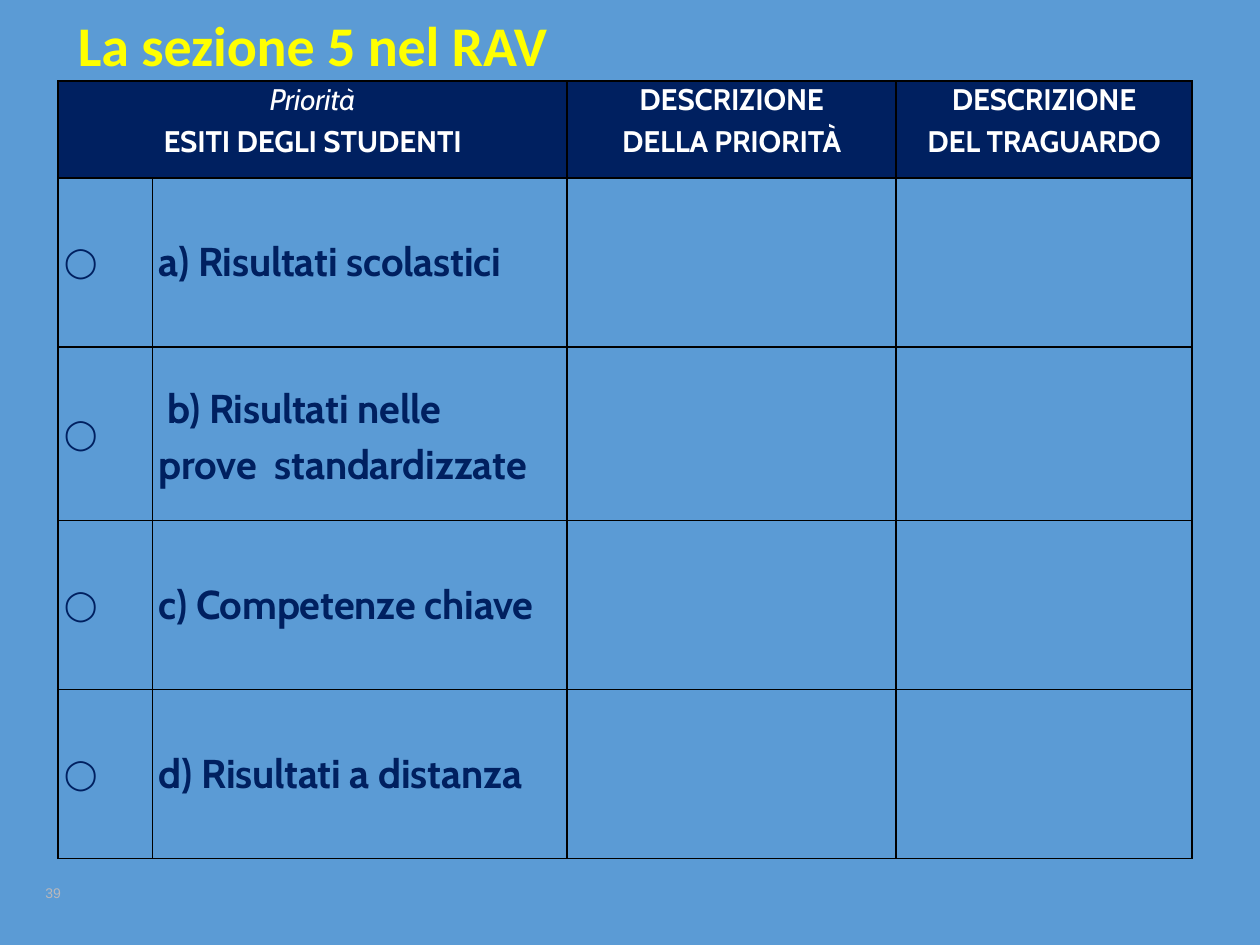
import pptx
import pptx.dml.color
import pptx.enum.text
import pptx.oxml
import pptx.util
from lxml import etree

Pt = pptx.util.Pt
RGB = pptx.dml.color.RGBColor.from_string
ALIGN = pptx.enum.text.PP_ALIGN
ANCHOR = pptx.enum.text.MSO_ANCHOR
COLOURS = {"sky": "5B9BD5", "navy": "002060", "white": "FFFFFF",
           "yellow": "FFFF00", "grey": "B9B8BB", "black": "000000"}


class SlideBuilder:
    """Holds the deck style and the current page."""

    def __init__(self, width, height):
        self.deck = pptx.Presentation()
        self.deck.slide_width, self.deck.slide_height = Pt(width), Pt(height)
        self.page = self.deck.slides.add_slide(self.deck.slide_layouts[6])
        background = self.page.background.fill
        background.solid()
        background.fore_color.rgb = RGB(COLOURS["sky"])

    def style(self, para, size, colour, font="Cabin", bold=True, italic=False, spacing=-0.1):
        for span in para.runs:
            span.font.name, span.font.size = font, Pt(size)
            span.font.bold, span.font.italic = bold, italic
            span.font.color.rgb = RGB(COLOURS[colour])
            span.font._element.set("spc", str(round(spacing * 100)))

    def text(self, left, top, width, height, words, size, colour, **look):
        box = self.page.shapes.add_textbox(Pt(left), Pt(top), Pt(width), Pt(height))
        frame = box.text_frame
        frame.word_wrap = True
        frame.vertical_anchor = ANCHOR.MIDDLE
        frame.margin_left = frame.margin_right = frame.margin_top = frame.margin_bottom = 0
        frame.text = words
        self.style(frame.paragraphs[0], size, colour, **look)

    def table(self, left, top, widths, heights):
        frame = self.page.shapes.add_table(len(heights), len(widths), Pt(left), Pt(top),
                                           Pt(sum(widths)), Pt(sum(heights)))
        table = frame.table
        table.first_row = table.horz_banding = False
        for column, width in zip(table.columns, widths):
            column.width = Pt(width)
        for row, height in zip(table.rows, heights):
            row.height = Pt(height)
        for cell in table.iter_cells():
            self.border(cell)
            cell.fill.background()
            cell.vertical_anchor = ANCHOR.MIDDLE
            cell.margin_left = Pt(3.6)
            cell.margin_right = cell.margin_top = cell.margin_bottom = 0
        return table

    def border(self, cell):
        properties = cell._tc.get_or_add_tcPr()
        for side in ("lnL", "lnR", "lnT", "lnB"):
            line = etree.SubElement(properties, pptx.oxml.ns.qn("a:" + side), w=str(Pt(1)))
            fill = etree.SubElement(line, pptx.oxml.ns.qn("a:solidFill"))
            etree.SubElement(fill, pptx.oxml.ns.qn("a:srgbClr"), val=COLOURS["black"])

    def header(self, cell, lines, italic_first=False):
        cell.fill.solid()
        cell.fill.fore_color.rgb = RGB(COLOURS["navy"])
        cell.vertical_anchor = ANCHOR.TOP
        cell.margin_left = 0
        cell.margin_top = Pt(0.7)
        cell.text_frame.text = "\n".join(lines)
        for index, para in enumerate(cell.text_frame.paragraphs):
            light = italic_first and index == 0
            para.alignment = ALIGN.CENTER
            para.space_before = Pt(3 if index else 0.7)
            self.style(para, 17, "white", bold=not light, italic=light)

    def label(self, cell, words, size, indent=0, **look):
        cell.text_frame.text = words
        para = cell.text_frame.paragraphs[0]
        if indent:
            para.line_spacing = 1.15
            para._p.get_or_add_pPr().set("indent", str(Pt(indent)))
            cell.margin_right = Pt(14.4)
        self.style(para, size, "navy", **look)


def main():
    slide = SlideBuilder(720, 540)
    slide.text(26, 506, 20, 9, "39", 8, "grey", font="Arial", bold=False)
    table = slide.table(33.1, 46.2, [54, 237, 188, 169], [55.4, 96.6, 99.4, 96.6, 96.6])

    table.cell(0, 0).merge(table.cell(0, 1))
    slide.header(table.cell(0, 0), ["Priorità", "ESITI DEGLI STUDENTI"], italic_first=True)
    slide.header(table.cell(0, 2), ["DESCRIZIONE", "DELLA PRIORITÀ"])
    slide.header(table.cell(0, 3), ["DESCRIZIONE", "DEL TRAGUARDO"])

    outcomes = [("a) Risultati scolastici", 0),
                ("b) Risultati nelle prove  standardizzate", 5),
                ("c) Competenze chiave", 0),
                ("d) Risultati a distanza", 0)]
    for row, (outcome, indent) in enumerate(outcomes, start=1):
        slide.label(table.cell(row, 0), "◯", 17, font="Arial", bold=False, spacing=0)
        slide.label(table.cell(row, 1), outcome, 23, indent)

    slide.text(44.6, 5, 623, 40, "La sezione 5 nel RAV", 32, "yellow", font="Calibri")
    slide.deck.save("out.pptx")


if __name__ == "__main__":
    main()
